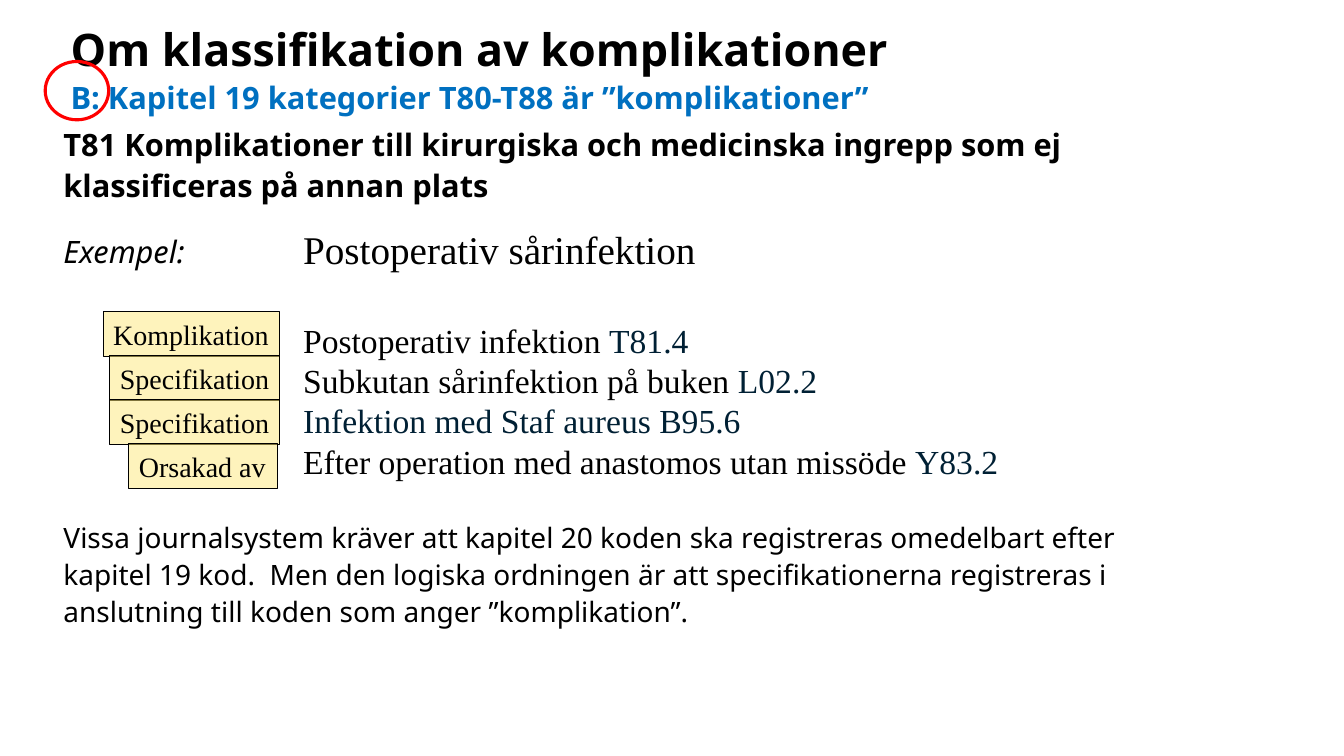
"""Build the slide on classifying complications with T80-T88 codes."""
from lxml import etree
from pptx import Presentation
from pptx.dml.color import RGBColor
from pptx.enum.shapes import MSO_SHAPE
from pptx.enum.text import MSO_ANCHOR, PP_ALIGN
from pptx.oxml.ns import qn
from pptx.util import Cm, Pt

RECTANGLE, OVAL = MSO_SHAPE.RECTANGLE, MSO_SHAPE.OVAL
TOP, MIDDLE, LEFT = MSO_ANCHOR.TOP, MSO_ANCHOR.MIDDLE, PP_ALIGN.LEFT
BLACK = RGBColor(0, 0, 0)
BLUE = RGBColor(0x00, 0x70, 0xC0)
NAVY = RGBColor(0x00, 0x20, 0x34)
YELLOW = RGBColor(0xFE, 0xE8, 0x7A)
RED = RGBColor(0xFF, 0, 0)
SANS, SERIF = "Noto Sans", "Times New Roman"

TITLE = [
    dict(spans=[("Om klassifikation av komplikationer", BLACK)], size=32, bold=True),
    dict(spans=[("B: Kapitel 19 kategorier T80-T88 är ”komplikationer”", BLUE)], size=22, bold=True),
]
BODY = [
    dict(spans=[("T81 Komplikationer till kirurgiska och medicinska ingrepp som ej "
                 "klassificeras på annan plats", BLACK)], size=22, bold=True),
    dict(spans=[("Exempel:", BLACK)], size=22, italic=True, before=18),
    dict(spans=[("Vissa journalsystem kräver att kapitel 20 koden ska registreras omedelbart "
                 "efter kapitel 19 kod.  Men den logiska ordningen är att specifikationerna "
                 "registreras i anslutning till koden som anger ”komplikation”.", BLACK)],
         size=20, before=177),
]
CODES = [
    dict(spans=[("Postoperativ sårinfektion", BLACK)], size=28),
    dict(spans=[("Postoperativ infektion ", BLACK), ("T81.4", NAVY)], size=24, before=34),
    dict(spans=[("Subkutan sårinfektion på buken ", BLACK), ("L02.2", NAVY)], size=24),
    dict(spans=[("Infektion med Staf aureus B95.6", NAVY)], size=24),
    dict(spans=[("Efter operation med anastomos utan missöde ", BLACK), ("Y83.2", NAVY)], size=24),
]
LABELS = [("Komplikation", 2.6, 4.45), ("Specifikation", 2.77, 4.28),
          ("Specifikation", 2.77, 4.28), ("Orsakad av", 3.25, 3.74)]
LABEL_TOP, LABEL_STEP, LABEL_HEIGHT = 7.85, 1.11, 1.13


def write(shape, paragraphs, font=SANS, spacing=None, inset=0.25, anchor=TOP, wrap=True):
    """Fill a shape with formatted paragraphs."""
    frame = shape.text_frame
    frame.word_wrap = wrap
    frame.vertical_anchor = anchor
    frame.margin_left = frame.margin_right = Cm(inset)
    frame.margin_top = frame.margin_bottom = Cm(0.13)
    for index, row in enumerate(paragraphs):
        para = frame.paragraphs[0] if index == 0 else frame.add_paragraph()
        para.alignment = LEFT
        if spacing:
            para.line_spacing = spacing
        if "before" in row:
            para.space_before = Pt(row["before"])
        for text, color in row["spans"]:
            span = para.add_run()
            span.text = text
            span.font.name = font
            span.font.size = Pt(row["size"])
            span.font.bold = row.get("bold", False)
            span.font.italic = row.get("italic", False)
            span.font.color.rgb = color


def add_text(page, left, top, width, height, paragraphs, **layout):
    """Place a text box."""
    box = page.shapes.add_textbox(Cm(left), Cm(top), Cm(width), Cm(height))
    write(box, paragraphs, **layout)


def add_outline(page, kind, left, top, width, height, color, weight):
    """Place an unfilled shape with a coloured line."""
    shape = page.shapes.add_shape(kind, Cm(left), Cm(top), Cm(width), Cm(height))
    shape.shadow.inherit = False
    shape.fill.background()
    shape.line.color.rgb = color
    shape.line.width = Pt(weight)
    return shape


def add_label(page, text, left, top, width):
    """Place a half-transparent yellow label."""
    label = add_outline(page, RECTANGLE, left, top, width, LABEL_HEIGHT, BLACK, 0.75)
    label.fill.solid()
    label.fill.fore_color.rgb = YELLOW
    tint = label.fill._xPr.find(qn("a:solidFill"))[0]
    etree.SubElement(tint, qn("a:alpha"), val="50000")
    write(label, [dict(spans=[(text, BLACK)], size=20)], font=SERIF, anchor=MIDDLE, wrap=False)


def main():
    """Assemble and save the deck."""
    deck = Presentation()
    deck.slide_width, deck.slide_height = Cm(33.87), Cm(19.05)
    page = deck.slides.add_slide(deck.slide_layouts[6])
    add_text(page, 1.6, 2.95, 27, 14.63, BODY, spacing=1.1, inset=0)
    add_text(page, 1.78, 0.28, 27, 3, TITLE, spacing=1.1, inset=0)
    add_text(page, 7.39, 5.54, 18.36, 6.76, CODES, font=SERIF, wrap=False)
    for index, (text, left, width) in enumerate(LABELS):
        add_label(page, text, left, LABEL_TOP + index * LABEL_STEP, width)
    add_outline(page, OVAL, 1.14, 1.55, 1.6, 1.47, RED, 2.25)
    deck.save("out.pptx")


if __name__ == "__main__":
    main()
